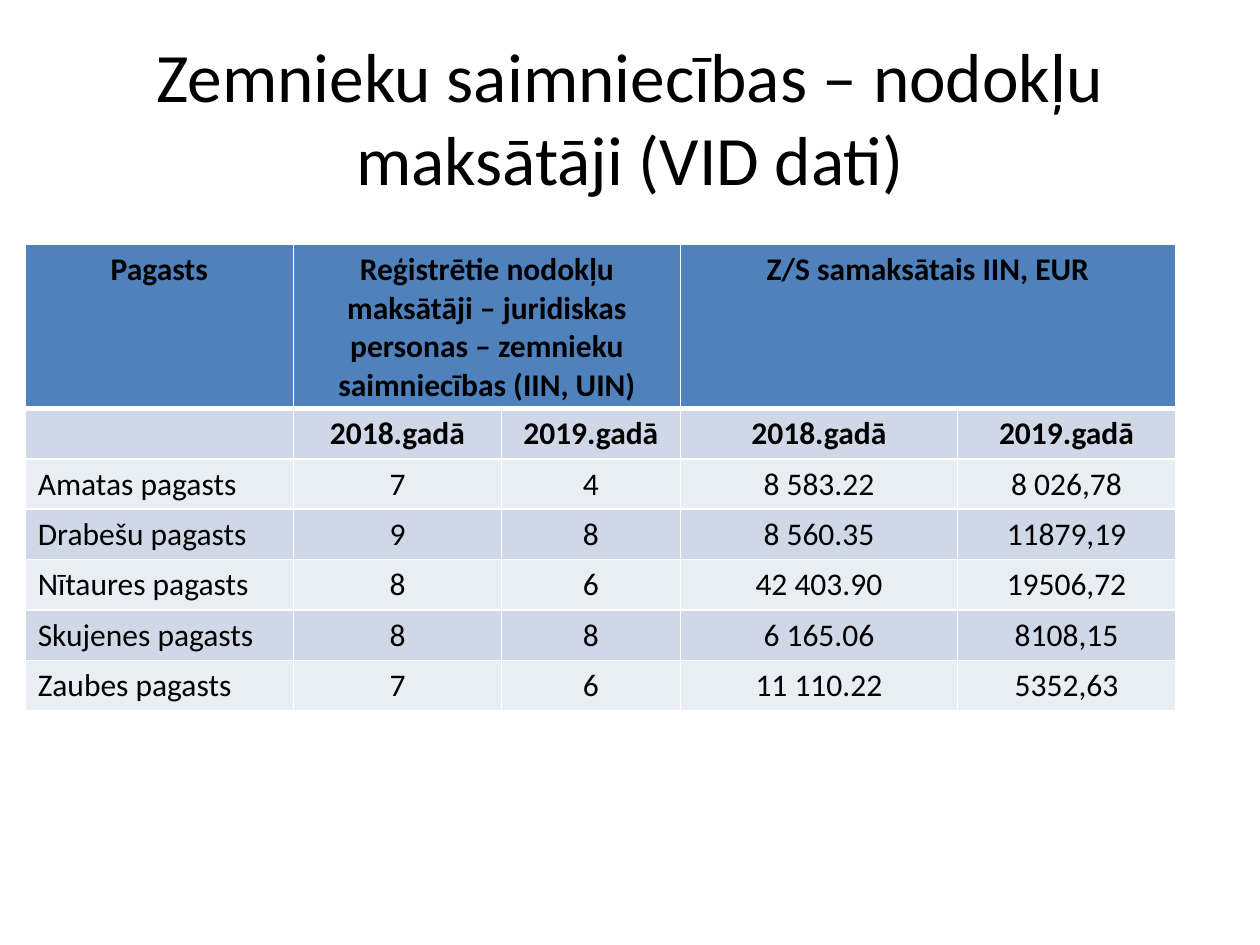
from dataclasses import dataclass

from lxml.etree import SubElement
from pptx import Presentation
from pptx.dml.color import RGBColor
from pptx.enum.text import MSO_ANCHOR, PP_ALIGN
from pptx.oxml.ns import qn
from pptx.slide import Slide
from pptx.table import Table, _Cell
from pptx.text.text import TextFrame
from pptx.util import Inches, Pt

COLOURS = {
    "text": "000000",
    "header": "4F81BD",
    "dark_band": "D0D8E8",
    "light_band": "E9EDF4",
    "border": "FFFFFF",
}
FONT = "Calibri"
COLUMN_WIDTHS = (2.13, 1.65, 1.42, 2.2, 1.73)
HEADER_HEIGHT, ROW_HEIGHT = 1.3, 0.4


@dataclass(frozen=True)
class TableRow:
    cells: tuple[str, ...]
    fill: str
    bold: bool = False
    bottom_border: float = 1
    top_border: float = 1


@dataclass(frozen=True)
class Parish:
    name: str
    taxpayers_2018: str
    taxpayers_2019: str
    tax_2018: str
    tax_2019: str

    def cells(self) -> tuple[str, ...]:
        return (self.name, self.taxpayers_2018, self.taxpayers_2019,
                self.tax_2018, self.tax_2019)


HEADER_ROWS = [
    TableRow(
        ("Pagasts",
         "Reģistrētie nodokļu maksātāji – juridiskas personas – "
         "zemnieku saimniecības (IIN, UIN)", "",
         "Z/S samaksātais IIN, EUR", ""),
        "header", bold=True, bottom_border=3),
    TableRow(("", *("2018.gadā", "2019.gadā") * 2),
             "dark_band", bold=True, top_border=3),
]
PARISHES = [
    Parish("Amatas pagasts", "7", "4", "8 583.22", "8 026,78"),
    Parish("Drabešu pagasts", "9", "8", "8 560.35", "11879,19"),
    Parish("Nītaures pagasts", "8", "6", "42 403.90", "19506,72"),
    Parish("Skujenes pagasts", "8", "8", "6 165.06", "8108,15"),
    Parish("Zaubes pagasts", "7", "6", "11 110.22", "5352,63"),
]


def write_text(frame: TextFrame, text: str, *, size: float = 18,
               bold: bool = False, align: PP_ALIGN = PP_ALIGN.CENTER) -> None:
    paragraph = frame.paragraphs[0]
    paragraph.alignment = align
    span = paragraph.add_run()
    span.text = text
    span.font.name = FONT
    span.font.size = Pt(size)
    span.font.bold = bold
    span.font.color.rgb = RGBColor.from_string(COLOURS["text"])


def set_borders(cell: _Cell, top: float, bottom: float) -> None:
    properties = cell._tc.get_or_add_tcPr()
    for side, width in (("L", 1), ("R", 1), ("T", top), ("B", bottom)):
        line = SubElement(properties, qn(f"a:ln{side}"), w=str(Pt(width)))
        fill = SubElement(line, qn("a:solidFill"))
        SubElement(fill, qn("a:srgbClr"), val=COLOURS["border"])


def draw_row(table: Table, index: int, row: TableRow) -> None:
    for column, text in enumerate(row.cells):
        cell = table.cell(index, column)
        set_borders(cell, row.top_border, row.bottom_border)
        cell.fill.solid()
        cell.fill.fore_color.rgb = RGBColor.from_string(COLOURS[row.fill])
        if text:
            is_name = column == 0 and not row.bold
            write_text(cell.text_frame, text, bold=row.bold,
                       align=PP_ALIGN.LEFT if is_name else PP_ALIGN.CENTER)


def draw_title(page: Slide) -> None:
    box = page.shapes.add_textbox(Inches(0.5), Inches(0.3), Inches(9), Inches(1.25))
    frame = box.text_frame
    frame.word_wrap = True
    frame.vertical_anchor = MSO_ANCHOR.MIDDLE
    write_text(frame, "Zemnieku saimniecības – nodokļu maksātāji (VID dati)", size=39.6)


def draw_table(page: Slide) -> None:
    bands = ("light_band", "dark_band")
    rows = HEADER_ROWS + [
        TableRow(parish.cells(), bands[index % 2])
        for index, parish in enumerate(PARISHES)
    ]
    heights = [HEADER_HEIGHT] + [ROW_HEIGHT] * (len(rows) - 1)
    table = page.shapes.add_table(
        len(rows), len(COLUMN_WIDTHS), Inches(0.2), Inches(1.94),
        Inches(sum(COLUMN_WIDTHS)), Inches(sum(heights))).table
    for column, width in zip(table.columns, COLUMN_WIDTHS):
        column.width = Inches(width)
    for index, (row, height) in enumerate(zip(rows, heights)):
        table.rows[index].height = Inches(height)
        draw_row(table, index, row)
    # Each group heading covers its two years
    for first in (1, 3):
        table.cell(0, first).merge(table.cell(0, first + 1))


def main() -> None:
    deck = Presentation()
    deck.slide_width, deck.slide_height = Inches(10), Inches(7.5)
    page = deck.slides.add_slide(deck.slide_layouts[6])
    draw_title(page)
    draw_table(page)
    deck.save("out.pptx")


if __name__ == "__main__":
    main()
